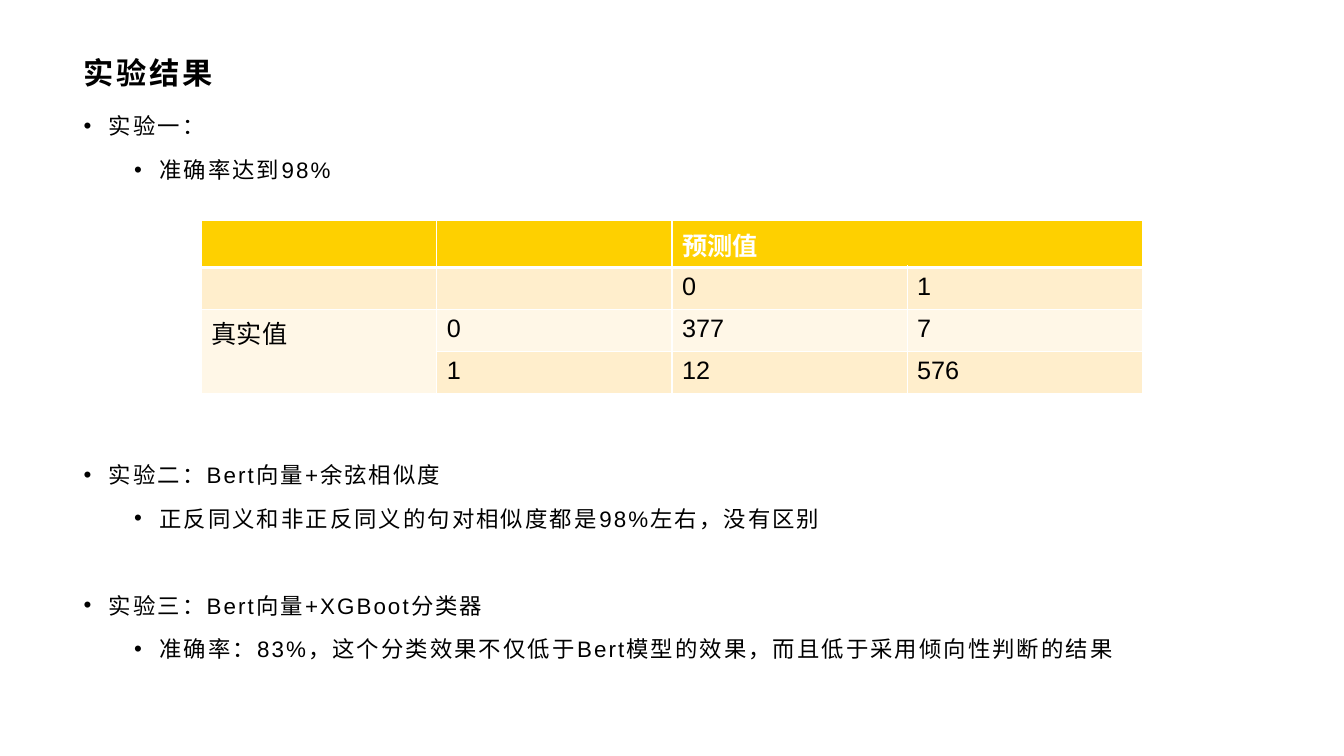
from lxml import etree
from pptx import Presentation
from pptx.dml.color import RGBColor
from pptx.enum.text import MSO_ANCHOR, MSO_AUTO_SIZE, PP_ALIGN
from pptx.oxml.ns import qn
from pptx.util import Inches, Pt

LEFT = PP_ALIGN.LEFT
TOP, MIDDLE = MSO_ANCHOR.TOP, MSO_ANCHOR.MIDDLE
NO_FIT = MSO_AUTO_SIZE.NONE

BLACK = RGBColor(0x00, 0x00, 0x00)
WHITE = RGBColor(0xFF, 0xFF, 0xFF)
GOLD = RGBColor(0xFE, 0xD0, 0x00)
BAND_DARK = RGBColor(0xFF, 0xEE, 0xCC)
BAND_LIGHT = RGBColor(0xFF, 0xF7, 0xE7)

# Bullets: level, text, space before in points
BULLETS = [
    (0, "实验一：", 0),
    (1, "准确率达到98%", 0),
    (0, "实验二：Bert向量+余弦相似度", 186.8),
    (1, "正反同义和非正反同义的句对相似度都是98%左右，没有区别", 0),
    (0, "实验三：Bert向量+XGBoot分类器", 31.1),
    (1, "准确率：83%，这个分类效果不仅低于Bert模型的效果，而且低于采用倾向性判断的结果", 0),
]

CONFUSION_MATRIX = [
    ["", "", "预测值", ""],
    ["", "", "0", "1"],
    ["真实值", "0", "377", "7"],
    ["", "1", "12", "576"],
]
MERGES = [((0, 2), (0, 3)), ((2, 0), (3, 0))]


class SlideBuilder:
    font_name = "Arial"

    def __init__(self, presentation):
        self.slide = presentation.slides.add_slide(presentation.slide_layouts[1])

    def add_run(self, paragraph, text, size, color=BLACK, bold=False, tracking=0):
        run = paragraph.add_run()
        run.text = text
        run.font.name = self.font_name
        run.font.size = Pt(size)
        run.font.bold = bold
        run.font.color.rgb = color
        if tracking:
            run._r.get_or_add_rPr().set("spc", str(round(tracking * 100)))

    def place(self, shape, left, top, width, height, anchor):
        shape.left, shape.top = Inches(left), Inches(top)
        shape.width, shape.height = Inches(width), Inches(height)
        frame = shape.text_frame
        frame.word_wrap = True
        frame.auto_size = NO_FIT
        frame.vertical_anchor = anchor
        return frame

    def title(self, text, *box):
        frame = self.place(self.slide.shapes.title, *box, MIDDLE)
        paragraph = frame.paragraphs[0]
        paragraph.alignment = LEFT
        self.add_run(paragraph, text, 21.6, bold=True, tracking=2)

    def bullets(self, items, *box):
        frame = self.place(self.slide.placeholders[1], *box, TOP)
        for index, (level, text, space_before) in enumerate(items):
            paragraph = frame.add_paragraph() if index else frame.paragraphs[0]
            properties = paragraph._p.get_or_add_pPr()
            properties.set("marL", str(Inches(0.25 + 0.5 * level)))
            properties.set("indent", str(Inches(-0.25)))
            etree.SubElement(properties, qn("a:buFont"), typeface=self.font_name)
            etree.SubElement(properties, qn("a:buChar"), char="•")
            paragraph.level = level
            paragraph.alignment = LEFT
            paragraph.line_spacing = 1.1
            paragraph.space_before = Pt(space_before)
            paragraph.space_after = Pt(10)
            self.add_run(paragraph, text, 16, tracking=1.5)

    def borders(self, cell, **widths):
        properties = cell._tc.get_or_add_tcPr()
        for side in "LRTB":
            line = etree.SubElement(properties, qn(f"a:ln{side}"), w=str(Pt(widths.get(side, 1))))
            fill = etree.SubElement(line, qn("a:solidFill"))
            etree.SubElement(fill, qn("a:srgbClr"), val=str(WHITE))

    def table(self, rows, merges, left, top, width, height):
        frame = self.slide.shapes.add_table(
            len(rows), len(rows[0]), Inches(left), Inches(top), Inches(width), Inches(height))
        table = frame.table
        fills = [GOLD, BAND_DARK, BAND_LIGHT, BAND_DARK]
        # A thick rule separates the header from the bands
        rules = {0: {"B": 3}, 1: {"T": 3}}
        for row, values in enumerate(rows):
            for column, text in enumerate(values):
                cell = table.cell(row, column)
                self.borders(cell, **rules.get(row, {}))
                cell.fill.solid()
                cell.fill.fore_color.rgb = fills[row]
                if text:
                    header = row == 0
                    self.add_run(cell.text_frame.paragraphs[0], text, 18,
                                 WHITE if header else BLACK, bold=header)
        for first, last in merges:
            table.cell(*first).merge(table.cell(*last))


def main():
    presentation = Presentation()
    presentation.slide_width = Inches(13.33)
    presentation.slide_height = Inches(7.5)
    builder = SlideBuilder(presentation)

    # Title and findings
    builder.title("实验结果", 0.73, 0.48, 11.87, 0.48)
    builder.bullets(BULLETS, 0.73, 1.04, 11.87, 5.89)

    # Confusion matrix of the first experiment
    builder.table(CONFUSION_MATRIX, MERGES, 2, 2.19, 9.33, 1.67)

    presentation.save("out.pptx")


if __name__ == "__main__":
    main()
